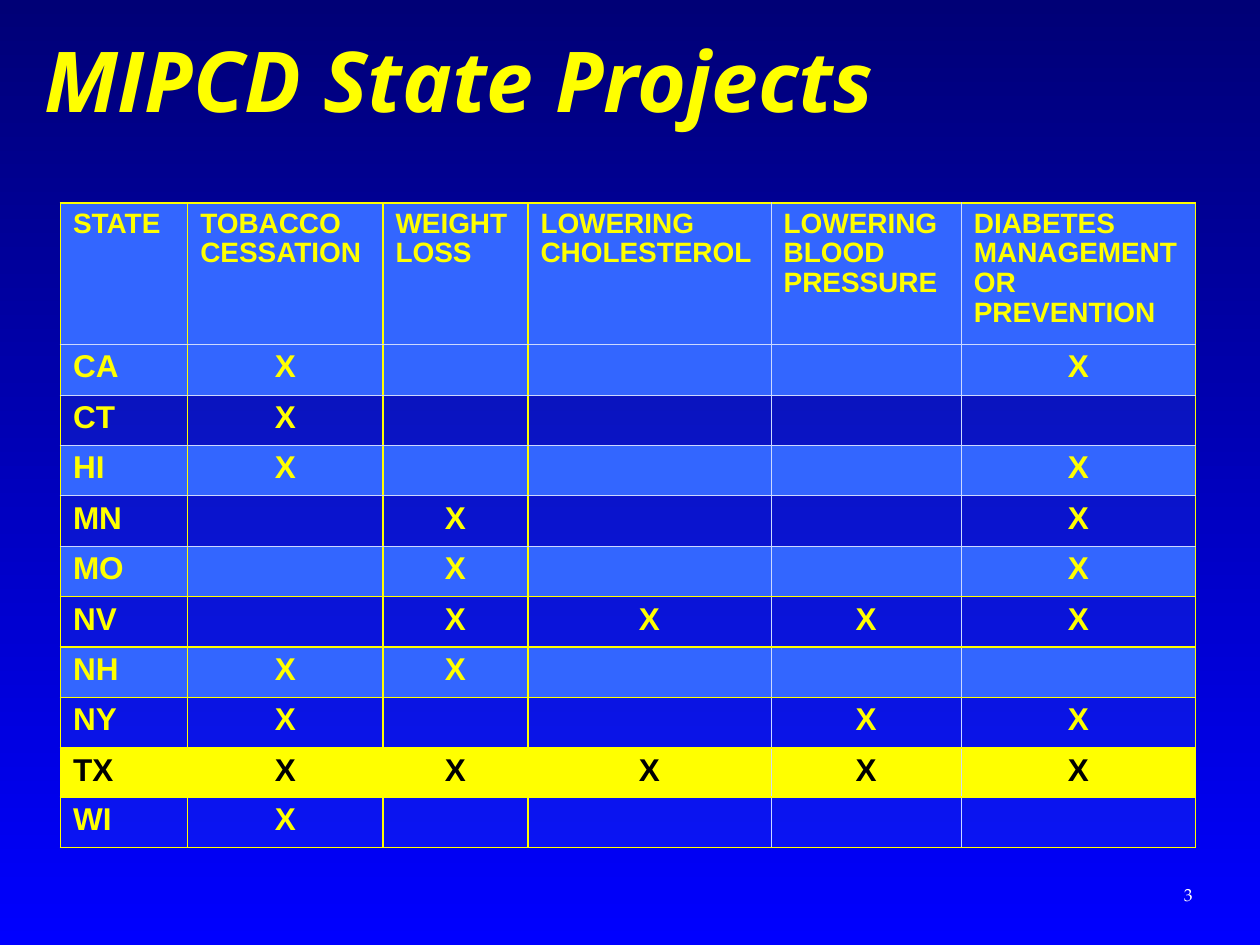
import dataclasses

import lxml.etree
import pptx
import pptx.dml.color
import pptx.enum.text
import pptx.oxml.ns
import pptx.util

Inches = pptx.util.Inches
Pt = pptx.util.Pt
ALIGN = pptx.enum.text.PP_ALIGN
qn = pptx.oxml.ns.qn

YELLOW, BLUE, PALE, BLACK, WHITE = "FFFF00", "3366FF", "CCD9FF", "000000", "FFFFFF"
HEADINGS = ["STATE", "TOBACCO CESSATION", "WEIGHT LOSS", "LOWERING CHOLESTEROL",
            "LOWERING BLOOD PRESSURE", "DIABETES MANAGEMENT OR PREVENTION"]
COLUMN_WIDTHS = [1.01, 1.55, 1.15, 1.93, 1.51, 1.86]
HEADER_HEIGHT, STATE_HEIGHT = 1.08, 0.38
FIRST_PALE_COLUMN_EDGE, FIRST_YELLOW_ROW_EDGE = 4, 6


@dataclasses.dataclass(frozen=True)
class Project:
    """A state and the numbers of the columns it is marked in."""
    state: str
    goals: tuple[int, ...]
    highlighted: bool = False


@dataclasses.dataclass(frozen=True)
class Style:
    """The look of a run of text."""
    size: float
    color: str = YELLOW
    font: str = "Arial"
    bold: bool = True
    italic: bool = False


PROJECTS = [
    Project("CA", (1, 5)),
    Project("CT", (1,)),
    Project("HI", (1, 5)),
    Project("MN", (2, 5)),
    Project("MO", (2, 5)),
    Project("NV", (2, 3, 4, 5)),
    Project("NH", (1, 2)),
    Project("NY", (1, 4, 5)),
    Project("TX", (1, 2, 3, 4, 5), highlighted=True),
    Project("WI", (1,)),
]


def rgb(color: str) -> pptx.dml.color.RGBColor:
    """Turn a hex string into a colour."""
    return pptx.dml.color.RGBColor.from_string(color)


def write(paragraph, text: str, style: Style, align=ALIGN.LEFT) -> None:
    """Add one styled run to a paragraph."""
    paragraph.alignment = align
    run = paragraph.add_run()
    run.text = text
    font = run.font
    font.name, font.size = style.font, Pt(style.size)
    font.bold, font.italic = style.bold, style.italic
    font.color.rgb = rgb(style.color)


def add_text(slide, box: tuple[float, ...], text: str, style: Style,
             align=ALIGN.LEFT, inset: float = 0.1) -> None:
    """Place a vertically centred text box."""
    frame = slide.shapes.add_textbox(*map(Inches, box)).text_frame
    frame.word_wrap = True
    frame.margin_left = Inches(inset)
    frame.vertical_anchor = pptx.enum.text.MSO_ANCHOR.MIDDLE
    write(frame.paragraphs[0], text, style, align)


def add_solid(parent, color: str, alpha: int = 100) -> None:
    """Append a solid fill with an opacity in percent."""
    fill = lxml.etree.SubElement(parent, qn("a:solidFill"))
    value = lxml.etree.SubElement(fill, qn("a:srgbClr"), val=color)
    if alpha < 100:
        lxml.etree.SubElement(value, qn("a:alpha"), val=str(alpha * 1000))


def column_edge(index: int) -> tuple[str, float]:
    """Give colour and width of a vertical rule."""
    pale = FIRST_PALE_COLUMN_EDGE <= index < len(HEADINGS)
    return (PALE, 0.5) if pale else (YELLOW, 1)


def row_edge(index: int) -> tuple[str, float]:
    """Give colour and width of a horizontal rule."""
    return (PALE, 0.5) if 0 < index < FIRST_YELLOW_ROW_EDGE else (YELLOW, 1)


def paint_cell(cell, row: int, column: int, color: str, alpha: int) -> None:
    """Draw the borders and the fill of a cell."""
    properties = cell._tc.get_or_add_tcPr()
    edges = {"a:lnL": column_edge(column), "a:lnR": column_edge(column + 1),
             "a:lnT": row_edge(row), "a:lnB": row_edge(row + 1)}
    for tag, (line_color, width) in edges.items():
        line = lxml.etree.SubElement(properties, qn(tag), w=str(int(Pt(width))))
        add_solid(line, line_color)
    add_solid(properties, color, alpha)


def fill_cell(cell, text: str, style: Style, align) -> None:
    """Write a cell, keeping the text size in an empty one."""
    paragraph = cell.text_frame.paragraphs[0]
    paragraph.line_spacing = 0.96
    if text:
        write(paragraph, text, style, align)
        return
    ending = lxml.etree.SubElement(paragraph._p, qn("a:endParaRPr"), sz=str(int(style.size * 100)))
    lxml.etree.SubElement(ending, qn("a:latin"), typeface=style.font)


def add_projects(slide) -> None:
    """Build the table of states and their goals."""
    height = HEADER_HEIGHT + STATE_HEIGHT * len(PROJECTS)
    table = slide.shapes.add_table(
        len(PROJECTS) + 1, len(HEADINGS), Inches(0.48), Inches(1.61),
        Inches(sum(COLUMN_WIDTHS)), Inches(height)).table
    for column, width in zip(table.columns, COLUMN_WIDTHS):
        column.width = Inches(width)
    table.rows[0].height = Inches(HEADER_HEIGHT)
    for column, heading in enumerate(HEADINGS):
        cell = table.cell(0, column)
        fill_cell(cell, heading, Style(16), ALIGN.LEFT)
        paint_cell(cell, 0, column, BLUE, 100)
    for row, project in enumerate(PROJECTS, start=1):
        table.rows[row].height = Inches(STATE_HEIGHT)
        style = Style(18, BLACK if project.highlighted else YELLOW)
        color = YELLOW if project.highlighted else BLUE
        alpha = 100 if project.highlighted or row % 2 else 20
        for column in range(len(HEADINGS)):
            cell = table.cell(row, column)
            mark = "X" if column in project.goals else ""
            fill_cell(cell, mark if column else project.state, style,
                      ALIGN.CENTER if column else ALIGN.LEFT)
            paint_cell(cell, row, column, color, alpha)


def paint_background(slide) -> None:
    """Shade the slide from dark blue down to bright blue."""
    fill = slide.background.fill
    fill.gradient()
    fill.gradient_angle = 270
    for stop, color in zip(fill.gradient_stops, ("000076", "0000FF")):
        stop.color.rgb = rgb(color)


def main() -> None:
    """Build and save the slide."""
    deck = pptx.Presentation()
    deck.slide_width, deck.slide_height = Inches(10), Inches(7.5)
    slide = deck.slides.add_slide(deck.slide_layouts[6])
    paint_background(slide)
    add_text(slide, (9.06, 6.95, 0.74, 0.3), "3",
             Style(10, WHITE, "TeX Gyre Pagella", bold=False), ALIGN.CENTER)
    add_text(slide, (0, 0, 10, 1.25), "MIPCD State Projects",
             Style(48, font="Open Sans", italic=True), inset=0.35)
    add_projects(slide)
    deck.save("out.pptx")


if __name__ == "__main__":
    main()
